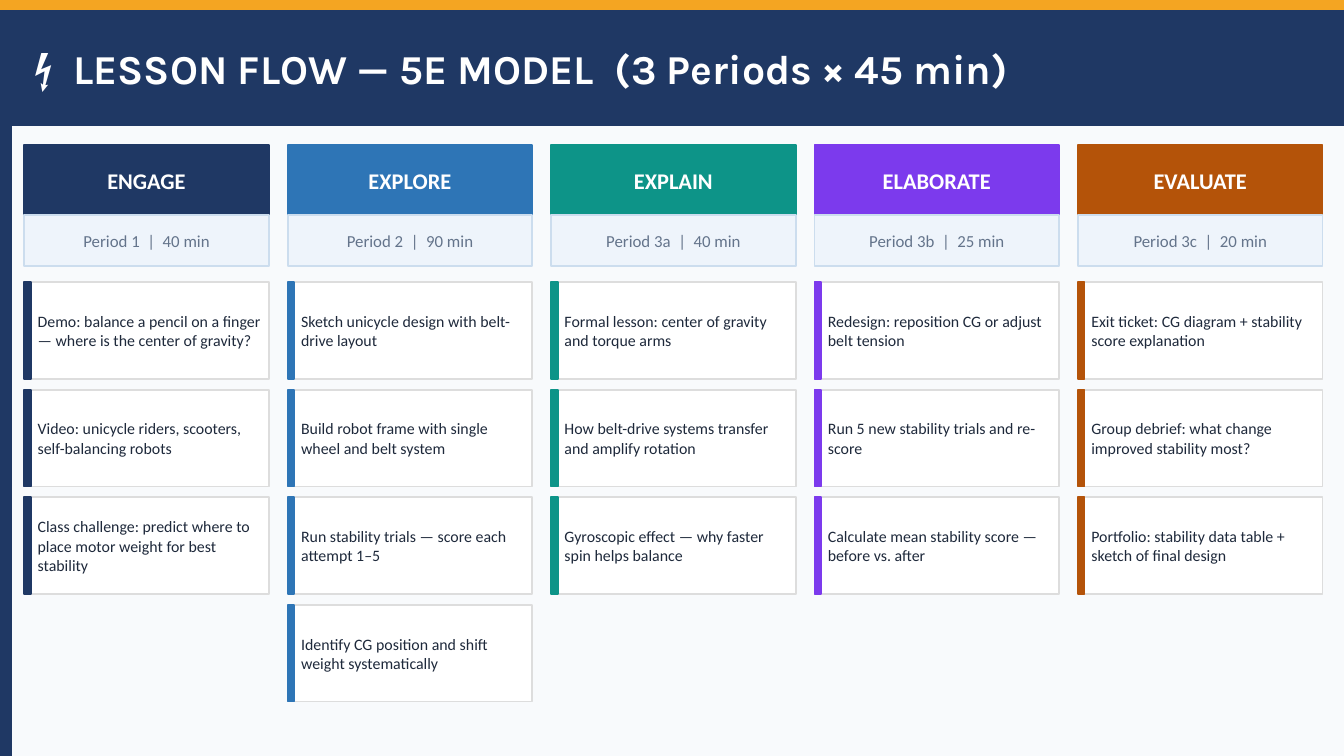
import pptx
import pptx.dml.color
import pptx.enum.shapes
import pptx.enum.text
import pptx.util

COLOURS = {
    "navy": "1F3864", "amber": "F4A522", "blue": "2E75B6", "teal": "0D9488",
    "violet": "7C3AED", "rust": "B45309", "white": "FFFFFF", "paper": "F8FAFC",
    "ice": "EEF4FB", "ice_edge": "CCDDEE", "grey_edge": "DDDDDD",
    "slate": "64748B", "ink": "1E293B",
}
TEXT_FORMATS = {
    "title": {"name": "Karla", "size": 22, "bold": True, "colour": "white"},
    "phase": {"name": "Calibri", "size": 12, "bold": True, "colour": "white"},
    "period": {"name": "Calibri", "size": 9, "bold": False, "colour": "slate"},
    "activity": {"name": "Calibri", "size": 8.5, "bold": False, "colour": "ink"},
}
PHASES = [
    ("ENGAGE", "Period 1  |  40 min", "navy", [
        "Demo: balance a pencil on a finger — where is the center of gravity?",
        "Video: unicycle riders, scooters, self-balancing robots",
        "Class challenge: predict where to place motor weight for best stability"]),
    ("EXPLORE", "Period 2  |  90 min", "blue", [
        "Sketch unicycle design with belt-drive layout",
        "Build robot frame with single wheel and belt system",
        "Run stability trials — score each attempt 1–5",
        "Identify CG position and shift weight systematically"]),
    ("EXPLAIN", "Period 3a  |  40 min", "teal", [
        "Formal lesson: center of gravity and torque arms",
        "How belt-drive systems transfer and amplify rotation",
        "Gyroscopic effect — why faster spin helps balance"]),
    ("ELABORATE", "Period 3b  |  25 min", "violet", [
        "Redesign: reposition CG or adjust belt tension",
        "Run 5 new stability trials and re-score",
        "Calculate mean stability score — before vs. after"]),
    ("EVALUATE", "Period 3c  |  20 min", "rust", [
        "Exit ticket: CG diagram + stability score explanation",
        "Group debrief: what change improved stability most?",
        "Portfolio: stability data table + sketch of final design"]),
]

# The slide is a fine grid of square cells, 500 columns wide.
COLUMNS, ROWS = 500, 281.25
EDGE = 4
TITLE_HEIGHT = 42.5
PHASE_LEFT, PHASE_WIDTH, PHASE_STEP = 9, 91, 98
PHASE_TOP, PHASE_HEIGHT, PERIOD_HEIGHT = 54, 26, 19
CARD_TOP, CARD_HEIGHT, CARD_STEP = 105, 36, 40
ACCENT_WIDTH, CARD_INDENT, CARD_TEXT_WIDTH = 2.5, 5, 84


def rgb(colour):
    return pptx.dml.color.RGBColor.from_string(COLOURS[colour])


class LessonSlide:
    """Draws styled elements placed by grid column and row."""

    def __init__(self, presentation):
        self.cell = presentation.slide_width / COLUMNS
        self.slide = presentation.slides.add_slide(presentation.slide_layouts[6])
        background = self.slide.background.fill
        background.solid()
        background.fore_color.rgb = rgb("paper")

    def place(self, *lengths):
        return [round(length * self.cell) for length in lengths]

    def box(self, left, top, width, height, fill, edge=None):
        shape = self.slide.shapes.add_shape(
            pptx.enum.shapes.MSO_SHAPE.RECTANGLE, *self.place(left, top, width, height))
        shape.shadow.inherit = False
        shape.fill.solid()
        shape.fill.fore_color.rgb = rgb(fill)
        shape.line.color.rgb = rgb(edge or fill)
        shape.line.width = pptx.util.Pt(1)

    def text(self, left, top, width, height, wording, role, align="LEFT"):
        frame = self.slide.shapes.add_textbox(
            *self.place(left, top, width, height)).text_frame
        settings = {"word_wrap": True, "vertical_anchor": pptx.enum.text.MSO_ANCHOR.MIDDLE,
                    "margin_left": 0, "margin_top": 0, "margin_right": 0, "margin_bottom": 0}
        for name, value in settings.items():
            setattr(frame, name, value)
        paragraph = frame.paragraphs[0]
        paragraph.alignment = pptx.enum.text.PP_ALIGN[align]
        run = paragraph.add_run()
        run.text = wording
        style = TEXT_FORMATS[role]
        font_values = {"name": style["name"], "size": pptx.util.Pt(style["size"]),
                       "bold": style["bold"]}
        for name, value in font_values.items():
            setattr(run.font, name, value)
        run.font.color.rgb = rgb(style["colour"])

    def label(self, left, top, width, height, wording, role, fill, edge=None):
        """Draw a filled box with a centred line of text over it."""
        self.box(left, top, width, height, fill, edge)
        self.text(left, top, width, height, wording, role, "CENTER")

    def card(self, left, top, wording, accent):
        self.box(left, top, PHASE_WIDTH, CARD_HEIGHT, "white", "grey_edge")
        self.box(left, top, ACCENT_WIDTH, CARD_HEIGHT, accent)
        self.text(left + CARD_INDENT, top, CARD_TEXT_WIDTH, CARD_HEIGHT, wording, "activity")

    def header(self, title):
        self.box(0, 0, COLUMNS, EDGE, "amber")
        self.box(0, EDGE, EDGE, ROWS - EDGE, "navy")
        self.box(EDGE, EDGE, COLUMNS - EDGE, TITLE_HEIGHT, "navy")
        self.text(12.5, EDGE, COLUMNS - 25, TITLE_HEIGHT, title, "title")

    def phase(self, index, name, period, colour, activities):
        left = PHASE_LEFT + index * PHASE_STEP
        self.label(left, PHASE_TOP, PHASE_WIDTH, PHASE_HEIGHT, name, "phase", colour)
        self.label(left, PHASE_TOP + PHASE_HEIGHT, PHASE_WIDTH, PERIOD_HEIGHT,
                   period, "period", "ice", "ice_edge")
        for row, activity in enumerate(activities):
            self.card(left, CARD_TOP + row * CARD_STEP, activity, colour)


def main():
    presentation = pptx.Presentation()
    presentation.slide_width = pptx.util.Inches(10)
    presentation.slide_height = pptx.util.Inches(10 * ROWS / COLUMNS)
    lesson = LessonSlide(presentation)
    lesson.header("⚡  LESSON FLOW — 5E MODEL  (3 Periods × 45 min)")
    for index, phase in enumerate(PHASES):
        lesson.phase(index, *phase)
    presentation.save("out.pptx")


if __name__ == "__main__":
    main()
